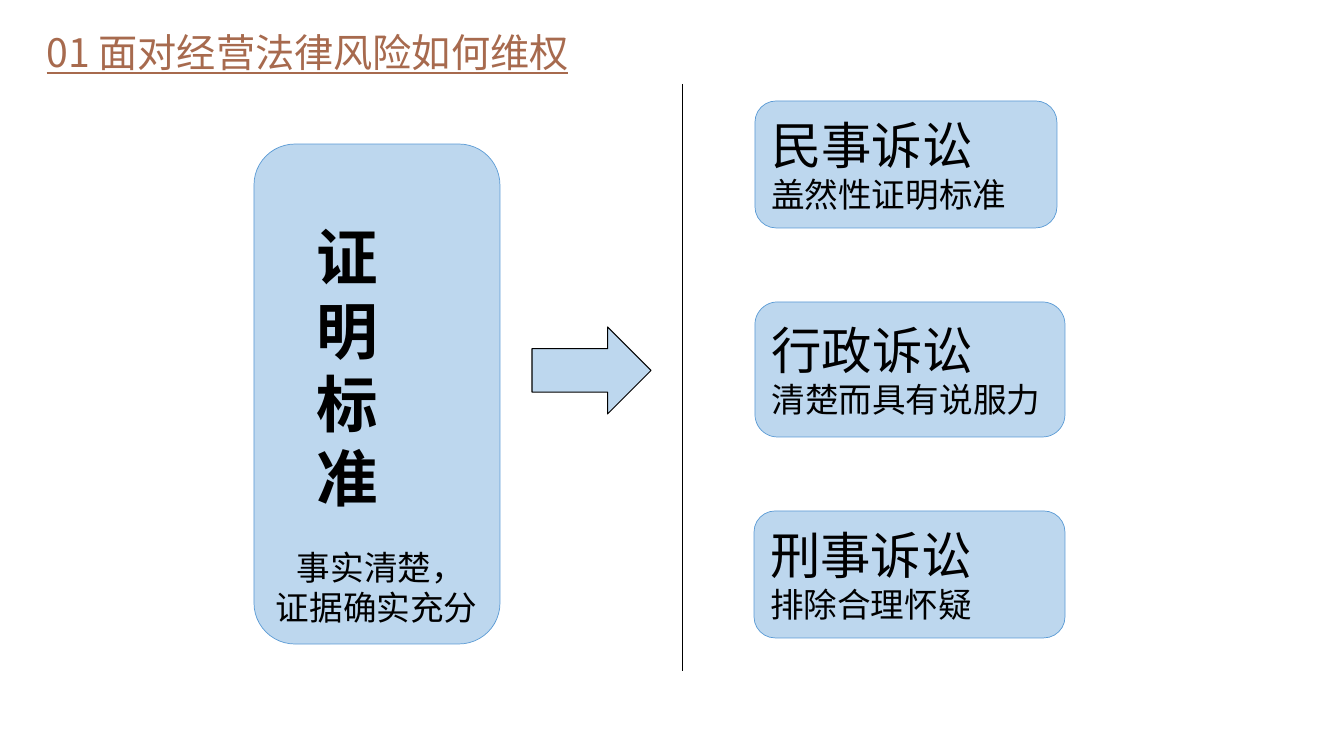
from dataclasses import dataclass

from lxml.etree import SubElement
from pptx import Presentation
from pptx.dml.color import RGBColor as Rgb
from pptx.enum.shapes import MSO_CONNECTOR as Link, MSO_SHAPE as Kind
from pptx.enum.text import MSO_ANCHOR as Anchor, MSO_AUTO_SIZE as Fit, PP_ALIGN as Align
from pptx.oxml.ns import qn
from pptx.util import Emu, Pt

SCALE = 914400 / 100.8


@dataclass(frozen=True)
class Theme:
    fill: str = "BDD7EE"
    edge: str = "5B9BD5"
    ink: str = "000000"
    brown: str = "A76A4E"
    latin: str = "Calibri"
    asian: str = "Noto Sans CJK SC"
    huge: int = 44
    large: int = 36
    title: int = 28
    body: int = 24
    lead: float = 1.19


THEME = Theme()


def px(count):
    return Emu(round(count * SCALE))


def write(frame, text, size, color=THEME.ink, font=THEME.latin, bold=False,
          under=False, align=Align.LEFT, lead=None, before=0, left=0, first=0):
    """Add a paragraph, taking the frame's first one while it is empty."""
    para = frame.paragraphs[0]
    if para.runs:
        para = frame.add_paragraph()
    para.alignment = align
    para.line_spacing = lead or Pt(round(size * THEME.lead, 1))
    para.space_before = Pt(before)
    props = para._p.get_or_add_pPr()
    props.set("marL", str(px(left)))
    props.set("indent", str(px(first)))
    run = para.add_run()
    run.text = text
    face = run.font
    face.size, face.bold, face.underline = Pt(size), bold, under
    face.color.rgb = Rgb.from_string(color)
    face.name = font
    SubElement(run._r.get_or_add_rPr(), qn("a:ea"), typeface=THEME.asian)


def block(slide, kind, spot, edge=THEME.edge, width=0.5, anchor=Anchor.MIDDLE):
    shape = slide.shapes.add_shape(kind, *map(px, spot))
    shape.shadow.inherit = False
    shape.fill.solid()
    shape.fill.fore_color.rgb = Rgb.from_string(THEME.fill)
    shape.line.color.rgb = Rgb.from_string(edge)
    shape.line.width = Pt(width)
    frame = shape.text_frame
    frame.word_wrap = True
    frame.vertical_anchor = anchor
    return frame


def heading(slide, text, spot):
    frame = slide.shapes.add_textbox(*map(px, spot)).text_frame
    frame.word_wrap = True
    frame.auto_size = Fit.SHAPE_TO_FIT_TEXT
    frame.vertical_anchor = Anchor.MIDDLE
    write(frame, text, THEME.title, color=THEME.brown, font=THEME.asian,
          under=True, align=Align.CENTER, lead=1.2)


def pillar(slide, name, note, spot):
    """Draw the tall panel with its name set one character to a line."""
    frame = block(slide, Kind.ROUNDED_RECTANGLE, spot, anchor=Anchor.BOTTOM)
    frame.margin_right = 0
    for char in name:
        write(frame, char, THEME.huge, bold=True, left=41)
    write(frame, note, THEME.body, before=24, first=21)


def card(slide, name, rule, spot):
    frame = block(slide, Kind.FLOWCHART_ALTERNATE_PROCESS, spot)
    write(frame, name, THEME.large)
    write(frame, rule, THEME.body)


def divider(slide, x, top, end):
    line = slide.shapes.add_connector(Link.STRAIGHT, px(x), px(top), px(x), px(end))
    line.line.color.rgb = Rgb.from_string(THEME.ink)
    line.line.width = Pt(0.75)
    SubElement(line._element.spPr, qn("a:effectLst"))


def main():
    deck = Presentation()
    deck.slide_width, deck.slide_height = px(1344), px(756)
    slide = deck.slides.add_slide(deck.slide_layouts[6])
    pillar(slide, "证明标准", "事实清楚，证据确实充分", (254, 144, 246, 500))
    block(slide, Kind.RIGHT_ARROW, (532, 327, 119, 87), edge=THEME.ink, width=0.75)
    divider(slide, 683, 84, 671)
    cards = [
        ("民事诉讼", "盖然性证明标准", (755, 101, 302, 127)),
        ("行政诉讼", "清楚而具有说服力", (755, 302, 310, 135)),
        ("刑事诉讼", "排除合理怀疑", (754, 511, 311, 127)),
    ]
    for name, rule, spot in cards:
        card(slide, name, rule, spot)
    heading(slide, "01 面对经营法律风险如何维权", (18, 14, 579, 66))
    deck.save("out.pptx")


if __name__ == "__main__":
    main()
